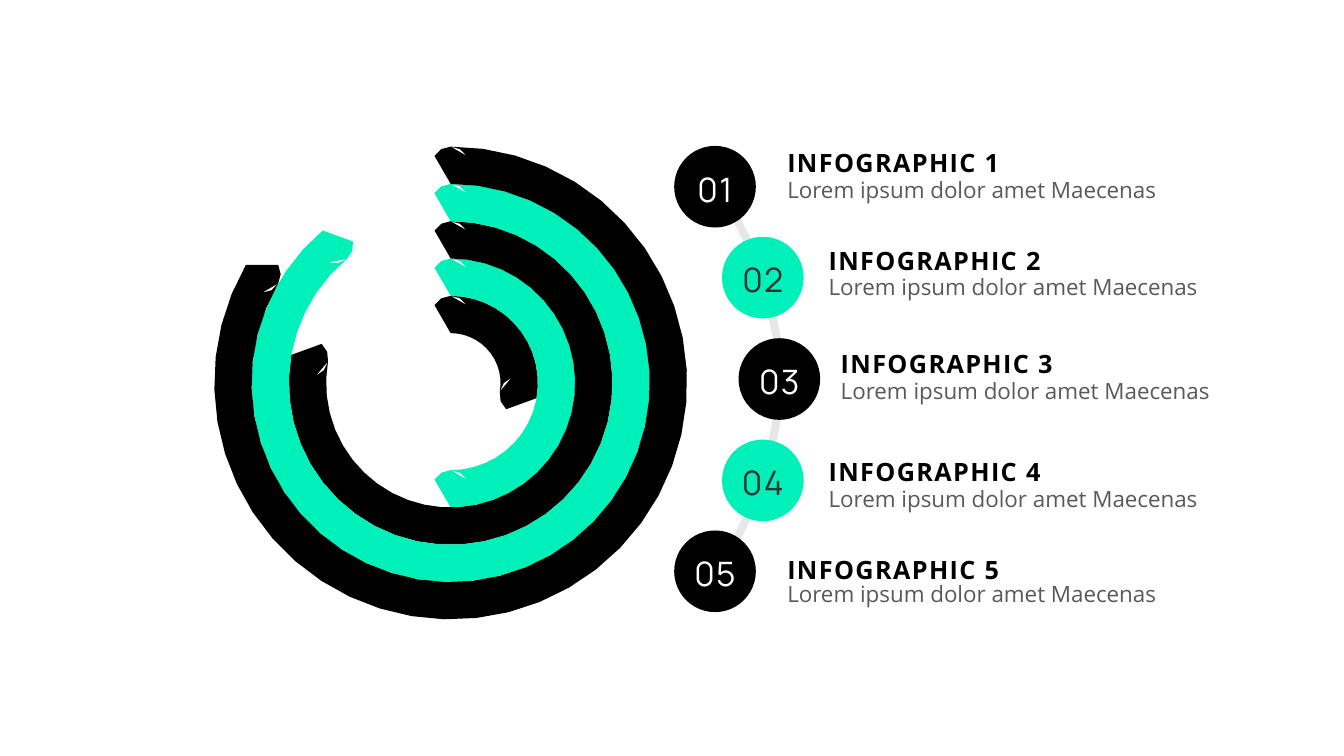
from dataclasses import dataclass
from math import ceil, cos, radians, sin

from pptx import Presentation
from pptx.dml.color import RGBColor
from pptx.enum.shapes import MSO_SHAPE
from pptx.enum.text import MSO_AUTO_SIZE, PP_ALIGN
from pptx.util import Inches, Pt


@dataclass(frozen=True)
class Theme:
    """Colours, fonts and type sizes of the slide."""
    black: str = "000000"
    mint: str = "00F0B9"
    trail: str = "E6E7E8"
    white: str = "FFFFFF"
    charcoal: str = "323232"
    grey: str = "595959"
    body_font: str = "Open Sans"
    number_font: str = "Manrope"
    heading_size: int = 18
    body_size: int = 16
    number_size: int = 24


THEME = Theme()
HEADING = {"name": THEME.body_font, "size": Pt(THEME.heading_size), "bold": True}
BODY = {"name": THEME.body_font, "size": Pt(THEME.body_size), "bold": False}
NUMBER = {"name": THEME.number_font, "size": Pt(THEME.number_size), "bold": False}

RING_SWEEPS = (100, 180, 280, 320, 300)
RING_STEP = 0.37
INNER_RADIUS = 0.68
TRAIL_RADIUS = 3.17
BADGE_ANGLE = 18.5
BADGE_SIZE = 0.81
ENTRIES = (
    (7.71, 1.41, 2.45, 0.29),
    (8.12, 2.38, 2.45, 0.28),
    (8.24, 3.41, 3.34, 0.28),
    (8.12, 4.48, 3.34, 0.28),
    (7.71, 5.45, 2.45, 0.26),
)


def paint(shape, color):
    """Give a shape a flat fill without line or shadow."""
    shape.shadow.inherit = False
    shape.fill.solid()
    shape.fill.fore_color.rgb = RGBColor.from_string(color)
    shape.line.fill.background()


def arc_points(center, radius, start, end, step):
    """List points along an arc, in degrees clockwise from twelve o'clock."""
    x, y = center
    count = max(1, ceil(abs(end - start) / step))
    angles = [radians(start + (end - start) * i / count) for i in range(count + 1)]
    return [(x + radius * sin(a), y - radius * cos(a)) for a in angles]


def add_band(slide, center, radius, width, start, end, color):
    """Draw a circular band with round ends."""
    half = width / 2
    start_cap, end_cap = (arc_points(center, radius, a, a, 1)[0] for a in (start, end))
    points = arc_points(center, radius + half, start, end, 8)
    points += arc_points(end_cap, half, end + 90, end + 270, 30)[1:-1]
    points += arc_points(center, radius - half, end, start, 8)
    points += arc_points(start_cap, half, start + 270, start + 450, 30)[1:-1]
    corners = [(Inches(x), Inches(y)) for x, y in points]
    builder = slide.shapes.build_freeform(*corners[0])
    builder.add_line_segments(corners[1:], close=True)
    paint(builder.convert_to_shape(), color)


def add_text(slide, box, text, style, color, spacing=0, align=PP_ALIGN.LEFT):
    """Place one line of text in a box."""
    shape = slide.shapes.add_textbox(*map(Inches, box))
    frame = shape.text_frame
    frame.word_wrap = True
    frame.auto_size = MSO_AUTO_SIZE.SHAPE_TO_FIT_TEXT
    paragraph = frame.paragraphs[0]
    paragraph.alignment = align
    run = paragraph.add_run()
    run.text = text
    for attribute, value in style.items():
        setattr(run.font, attribute, value)
    run.font.color.rgb = RGBColor.from_string(color)
    if spacing:
        run.font._element.set("spc", str(spacing * 100))


def add_rings(slide, center):
    """Draw the nested progress rings around a centre."""
    for index, sweep in enumerate(RING_SWEEPS):
        color = THEME.mint if index % 2 else THEME.black
        radius = INNER_RADIUS + index * RING_STEP
        add_band(slide, center, radius, RING_STEP, 0, sweep, color)


def add_badges(slide, center):
    """Draw the curved trail and its numbered badges around a centre."""
    add_band(slide, center, TRAIL_RADIUS, 0.08, 60.4, 119.6, THEME.trail)
    middle = len(ENTRIES) // 2
    for index in range(len(ENTRIES)):
        angle = radians((index - middle) * BADGE_ANGLE)
        x = center[0] + TRAIL_RADIUS * cos(angle)
        y = center[1] + TRAIL_RADIUS * sin(angle)
        half = BADGE_SIZE / 2
        box = (x - half, y - half, BADGE_SIZE, BADGE_SIZE)
        badge = slide.shapes.add_shape(MSO_SHAPE.OVAL, *map(Inches, box))
        fill, ink = ((THEME.mint, THEME.charcoal) if index % 2
                     else (THEME.black, THEME.white))
        paint(badge, fill)
        add_text(slide, (x - 0.42, y - 0.23, 0.84, 0.5), f"{index + 1:02}",
                 NUMBER, ink, 1, PP_ALIGN.CENTER)


def add_entry(slide, box, number):
    """Write one heading with its description below."""
    left, top, width, drop = box
    add_text(slide, (left, top, width, 0.4), f"INFOGRAPHIC {number}",
             HEADING, THEME.black, 1)
    add_text(slide, (left, top + drop, 4.32, 0.37),
             "Lorem ipsum dolor amet Maecenas", BODY, THEME.grey)


def main():
    """Build and save the slide."""
    presentation = Presentation()
    presentation.slide_width = Inches(13.33)
    presentation.slide_height = Inches(7.5)
    slide = presentation.slides.add_slide(presentation.slide_layouts[6])
    for number, box in enumerate(ENTRIES, 1):
        add_entry(slide, box, number)
    add_rings(slide, (4.47, 3.8))
    add_badges(slide, (4.56, 3.76))
    presentation.save("out.pptx")


if __name__ == "__main__":
    main()
